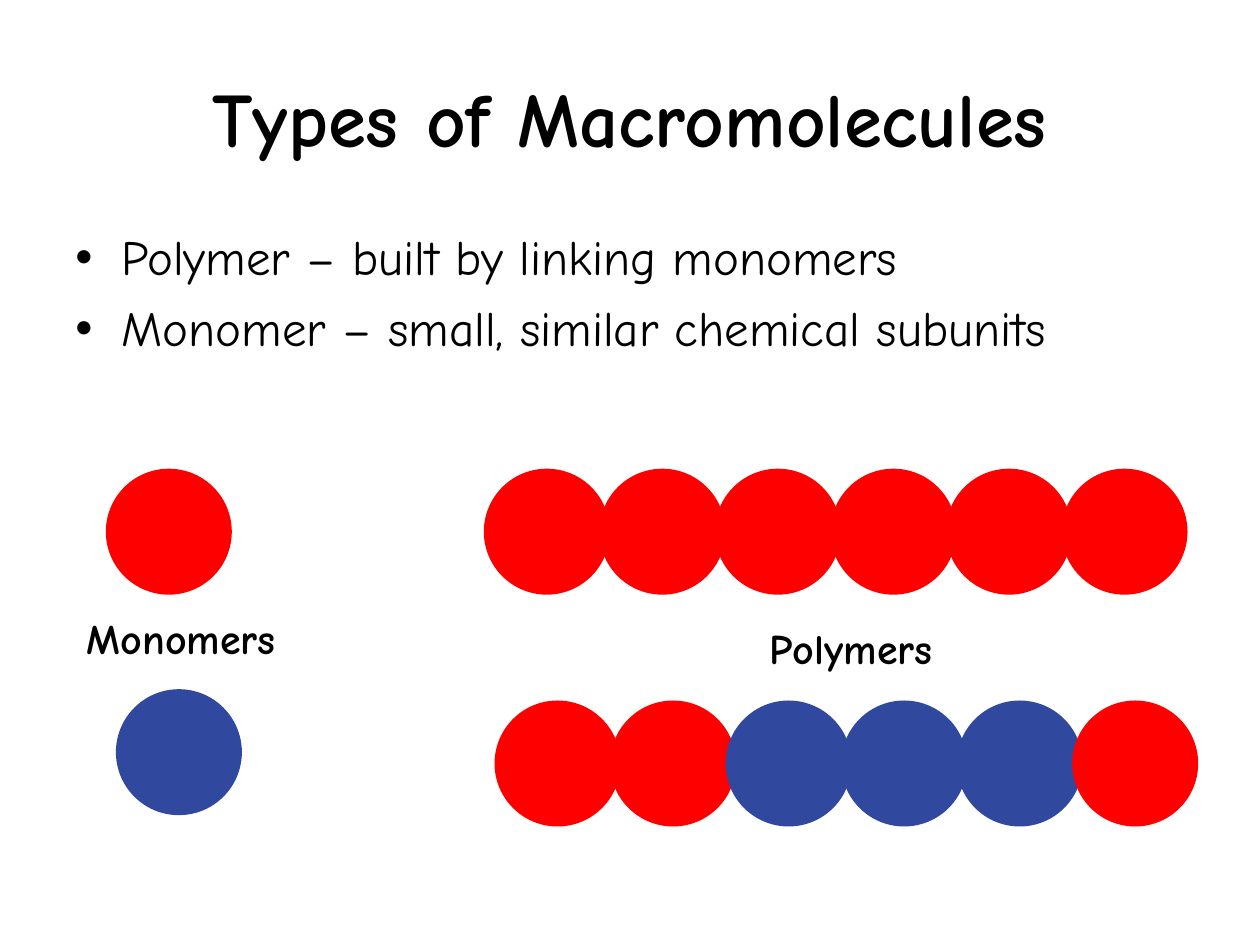
from lxml import etree
from pptx import Presentation
from pptx.dml.color import RGBColor
from pptx.enum.shapes import MSO_SHAPE
from pptx.enum.text import MSO_ANCHOR, PP_ALIGN
from pptx.oxml.ns import qn
from pptx.util import Inches, Pt

BLACK = RGBColor(0x00, 0x00, 0x00)
RED = RGBColor(0xFF, 0x00, 0x00)
BLUE = RGBColor(0x31, 0x48, 0x9F)
FONT = "Comic Neue"
OVAL = MSO_SHAPE.OVAL
TOP, MIDDLE = MSO_ANCHOR.TOP, MSO_ANCHOR.MIDDLE
LEFT, CENTER = PP_ALIGN.LEFT, PP_ALIGN.CENTER
COLS, ROWS = 100, 75
WIDTH, HEIGHT = Inches(10), Inches(7.5)
SIZE, STEP = 10, 9.17


def place(box):
    """Turn a box of grid columns and rows into slide lengths."""
    x, y, w, h = box
    return [round(n) for n in (x * WIDTH / COLS, y * HEIGHT / ROWS,
                               w * WIDTH / COLS, h * HEIGHT / ROWS)]


def write(slide, box, lines, size, bold=False, align=LEFT, anchor=TOP, bullet=False):
    """Write lines of text into a box."""
    frame = slide.shapes.add_textbox(*place(box)).text_frame
    frame.word_wrap = True
    frame.vertical_anchor = anchor
    frame.text = "\n".join(lines)
    for i, para in enumerate(frame.paragraphs):
        para.alignment = align
        if i:
            para.space_before = Pt(7)
        if bullet:
            props = para._p.get_or_add_pPr()
            props.set("marL", str(Inches(0.37)))
            props.set("indent", str(-Inches(0.37)))
            etree.SubElement(props, qn("a:buFont")).set("typeface", "Arial")
            etree.SubElement(props, qn("a:buChar")).set("char", "•")
        font = para.font
        font.name, font.size, font.bold = FONT, Pt(size), bold
        font.color.rgb = BLACK


def chain(slide, x, y, colors):
    """Draw a row of overlapping circles from a left top corner."""
    for i, color in enumerate(colors):
        ball = slide.shapes.add_shape(OVAL, *place((x + i * STEP, y, SIZE, SIZE)))
        ball.shadow.inherit = False
        ball.fill.solid()
        ball.fill.fore_color.rgb = color
        ball.line.fill.background()


def monomers(slide, box):
    """Show the two single units around their label."""
    x, y, w, h = box
    chain(slide, x + 2.5, y, [RED])
    write(slide, (x, y + 10.9, w, 5), ["Monomers"], 24, True)
    chain(slide, x + 3.3, y + h - SIZE, [BLUE])


def polymers(slide, box):
    """Show the two chains around their label."""
    x, y, w, h = box
    chain(slide, x, y, [RED] * 6)
    write(slide, (x + 21.7, y + 11.7, 24.2, 5.1), ["Polymers"], 24, True)
    chain(slide, x + w - 5 * STEP - SIZE, y + h - SIZE,
          [RED] * 2 + [BLUE] * 3 + [RED])


def main():
    """Build and save the slide."""
    deck = Presentation()
    deck.slide_width, deck.slide_height = WIDTH, HEIGHT
    slide = deck.slides.add_slide(deck.slide_layouts[6])
    write(slide, (5, 3, 90, 12.5), ["Types of Macromolecules"], 44, True, CENTER, MIDDLE)
    write(slide, (5, 17.5, 90, 49.5),
          ["Polymer – built by linking monomers",
           "Monomer – small, similar chemical subunits"], 28, bullet=True)
    monomers(slide, (5.9, 37.2, 22.5, 27.5))
    polymers(slide, (38.4, 37.2, 56.7, 28.4))
    deck.save("out.pptx")


if __name__ == "__main__":
    main()
